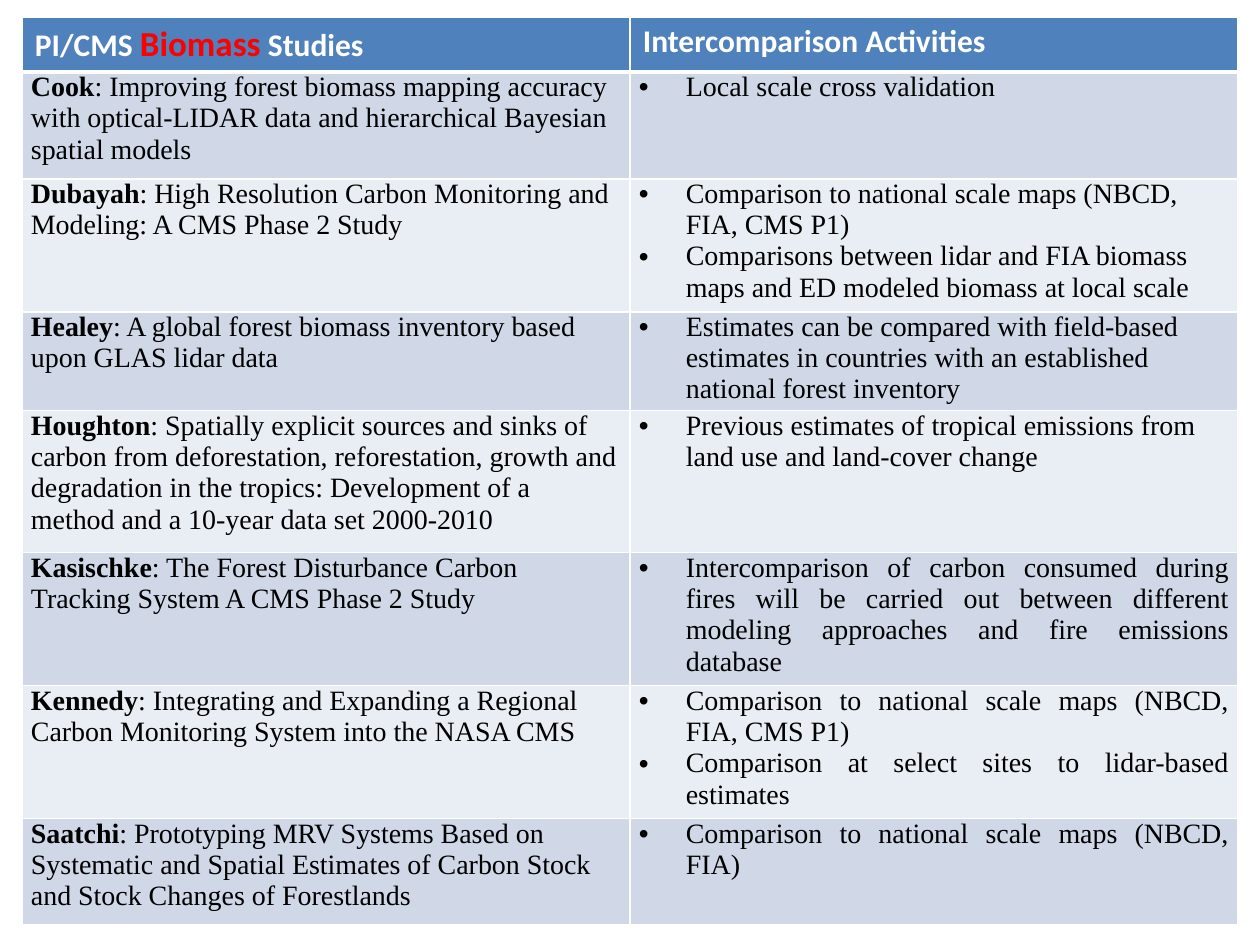
"""Build a slide with a table of biomass studies and their intercomparison activities."""
from dataclasses import dataclass

from lxml import etree
from pptx import Presentation
from pptx.dml.color import RGBColor
from pptx.enum.text import MSO_ANCHOR, PP_ALIGN
from pptx.oxml.ns import qn
from pptx.util import Emu, Pt

LEFT = PP_ALIGN.LEFT
JUSTIFY = PP_ALIGN.JUSTIFY
TOP = MSO_ANCHOR.TOP
EMU_PER_PX = 914400 / 126
SLIDE_WIDTH, SLIDE_HEIGHT = 1260, 945
TABLE_LEFT, TABLE_TOP = 22, 17
COLUMN_WIDTH = 608
HEADER_HEIGHT = 54
HEADER_INSETS = {"margin_left": 13, "margin_top": 6, "margin_right": 13, "margin_bottom": 6}
BODY_INSETS = {"margin_left": 9, "margin_top": 0, "margin_right": 9, "margin_bottom": 0}
BULLET_INDENT = 47


@dataclass(frozen=True)
class Theme:
    header_fill: str = "4F81BD"
    bands: tuple[str, str] = ("D0D8E8", "E9EDF4")
    white: str = "FFFFFF"
    black: str = "000000"
    red: str = "FF0000"
    header_font: str = "Calibri"
    body_font: str = "Times New Roman"
    header_size: int = 18
    accent_size: int = 20
    body_size: int = 16
    border: int = 1
    header_border: int = 3


@dataclass(frozen=True)
class Study:
    lead: str
    title: str
    activities: tuple[str, ...]
    height: int
    alignment: PP_ALIGN = LEFT


THEME = Theme()
HEADER = {"name": THEME.header_font, "size": THEME.header_size, "bold": True, "color": THEME.white}
ACCENT = HEADER | {"size": THEME.accent_size, "color": THEME.red}
BODY = {"name": THEME.body_font, "size": THEME.body_size, "bold": False, "color": THEME.black}
LEAD = BODY | {"bold": True}

STUDIES = (
    Study("Cook", "Improving forest biomass mapping accuracy with optical-LIDAR data "
          "and hierarchical Bayesian spatial models",
          ("Local scale cross validation",), 107, JUSTIFY),
    Study("Dubayah", "High Resolution Carbon Monitoring and Modeling: A CMS Phase 2 Study",
          ("Comparison to national scale maps (NBCD, FIA, CMS P1)",
           "Comparisons between lidar and FIA biomass maps and ED modeled biomass at local scale"),
          133),
    Study("Healey", "A global forest biomass inventory based upon GLAS lidar data",
          ("Estimates can be compared with field-based estimates in countries "
           "with an established national forest inventory",), 99),
    Study("Houghton", "Spatially explicit sources and sinks of carbon from deforestation, "
          "reforestation, growth and degradation in the tropics: Development of a method "
          "and a 10-year data set 2000-2010",
          ("Previous estimates of tropical emissions from land use and land-cover change",), 142),
    Study("Kasischke", "The Forest Disturbance Carbon Tracking System A CMS Phase 2 Study",
          ("Intercomparison of carbon consumed during fires will be carried out between "
           "different modeling approaches and fire emissions database",), 133, JUSTIFY),
    Study("Kennedy", "Integrating and Expanding a Regional Carbon Monitoring System into the NASA CMS",
          ("Comparison to national scale maps (NBCD, FIA, CMS P1)",
           "Comparison at select sites to lidar-based estimates"), 133, JUSTIFY),
    Study("Saatchi", "Prototyping MRV Systems Based on Systematic and Spatial Estimates "
          "of Carbon Stock and Stock Changes of Forestlands",
          ("Comparison to national scale maps (NBCD, FIA)",), 106, JUSTIFY),
)


def px(length: int) -> Emu:
    """Turn whole pixels into EMU."""
    return Emu(round(length * EMU_PER_PX))


def add_run(paragraph, text: str, style: dict) -> None:
    """Append a run with the given font values."""
    run = paragraph.add_run()
    run.text = text
    values = style | {"size": Pt(style["size"])}
    run.font.color.rgb = RGBColor.from_string(values.pop("color"))
    for name, value in values.items():
        setattr(run.font, name, value)


def add_bullet(paragraph) -> None:
    """Give a paragraph a hanging bullet."""
    properties = paragraph._p.get_or_add_pPr()
    indent = px(BULLET_INDENT)
    for name, value in {"marL": indent, "indent": -indent}.items():
        properties.set(name, str(value))
    etree.SubElement(properties, qn("a:buFont"), typeface="Arial")
    etree.SubElement(properties, qn("a:buChar"), char="•")


def format_cell(cell, fill: str, insets: dict, borders: dict) -> None:
    """Set the insets, borders and fill of a cell."""
    cell.vertical_anchor = TOP
    for name, value in insets.items():
        setattr(cell, name, px(value))
    properties = cell._tc.get_or_add_tcPr()
    for side, width in borders.items():
        line = etree.SubElement(properties, qn(f"a:{side}"), w=str(Pt(width)))
        solid = etree.SubElement(line, qn("a:solidFill"))
        etree.SubElement(solid, qn("a:srgbClr"), val=THEME.white)
    cell.fill.solid()
    cell.fill.fore_color.rgb = RGBColor.from_string(fill)


def fill_header(table) -> None:
    """Write the heading row."""
    headings = (
        (("PI/CMS ", HEADER), ("Biomass", ACCENT), (" Studies", HEADER)),
        (("Intercomparison Activities", HEADER),),
    )
    borders = dict.fromkeys(("lnL", "lnR", "lnT"), THEME.border) | {"lnB": THEME.header_border}
    table.rows[0].height = px(HEADER_HEIGHT)
    for cell, runs in zip(table.rows[0].cells, headings):
        format_cell(cell, THEME.header_fill, HEADER_INSETS, borders)
        for text, style in runs:
            add_run(cell.text_frame.paragraphs[0], text, style)


def fill_study(table, index: int, study: Study) -> None:
    """Write one study and its activities into a row."""
    row = table.rows[index]
    row.height = px(study.height)
    top = THEME.header_border if index == 1 else THEME.border
    borders = dict.fromkeys(("lnL", "lnR", "lnT", "lnB"), THEME.border) | {"lnT": top}
    for cell in row.cells:
        format_cell(cell, THEME.bands[(index - 1) % 2], BODY_INSETS, borders)
    title_cell, activity_cell = row.cells
    title = title_cell.text_frame.paragraphs[0]
    add_run(title, study.lead, LEAD)
    add_run(title, f": {study.title}", BODY)
    frame = activity_cell.text_frame
    for position, activity in enumerate(study.activities):
        paragraph = frame.add_paragraph() if position else frame.paragraphs[0]
        paragraph.alignment = study.alignment
        add_bullet(paragraph)
        add_run(paragraph, activity, BODY)


def main() -> None:
    """Create and save the presentation."""
    presentation = Presentation()
    presentation.slide_width, presentation.slide_height = px(SLIDE_WIDTH), px(SLIDE_HEIGHT)
    slide = presentation.slides.add_slide(presentation.slide_layouts[6])
    height = HEADER_HEIGHT + sum(study.height for study in STUDIES)
    table = slide.shapes.add_table(
        len(STUDIES) + 1, 2, px(TABLE_LEFT), px(TABLE_TOP), px(2 * COLUMN_WIDTH), px(height)
    ).table
    for column in table.columns:
        column.width = px(COLUMN_WIDTH)
    fill_header(table)
    for index, study in enumerate(STUDIES, start=1):
        fill_study(table, index, study)
    presentation.save("out.pptx")


if __name__ == "__main__":
    main()
